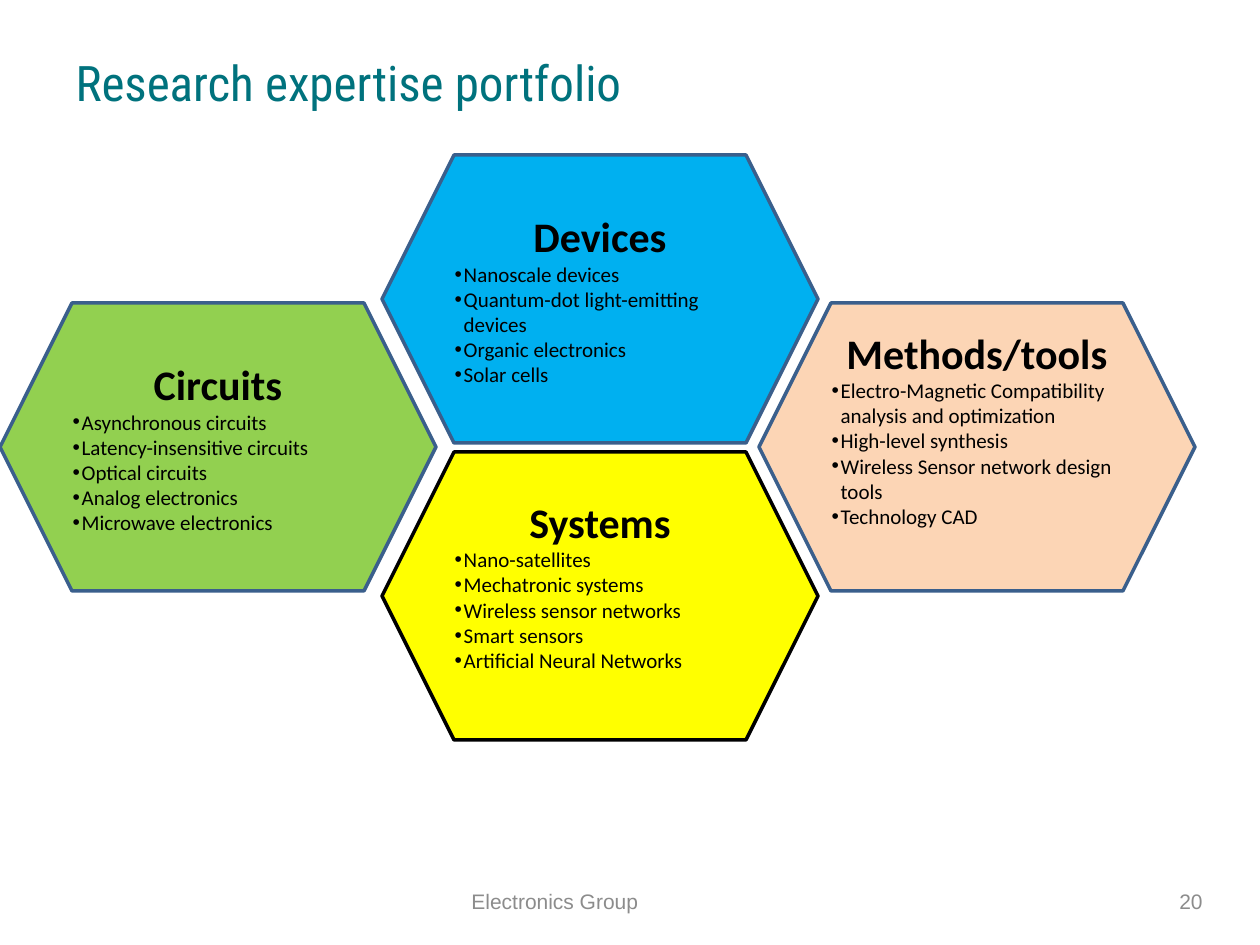
from pptx import Presentation
from pptx.dml.color import RGBColor
from pptx.enum.shapes import MSO_SHAPE
from pptx.enum.text import MSO_ANCHOR, PP_ALIGN
from pptx.util import Pt
from lxml.etree import SubElement
from pptx.oxml.ns import qn

PX = 914400 / 126
TEAL = RGBColor(0x00, 0x72, 0x7D)
GREY = RGBColor(0x8C, 0x8C, 0x8C)
BLACK = RGBColor(0x00, 0x00, 0x00)
NAVY = RGBColor(0x3A, 0x5F, 0x8C)
BLUE = RGBColor(0x00, 0xB0, 0xF0)
YELLOW = RGBColor(0xFF, 0xFF, 0x00)
PEACH = RGBColor(0xFC, 0xD5, 0xB5)
GREEN = RGBColor(0x92, 0xD0, 0x50)

WIDE, HIGH = 436, 288
TOP, STEP = 155, 297
MID = TOP + STEP // 2
LEFT, CENTRE, RIGHT = 0, 382, 759

CELLS = [
    (CENTRE, TOP, BLUE, NAVY, 0, "Devices",
     ["Nanoscale devices", "Quantum-dot light-emitting\vdevices",
      "Organic electronics", "Solar cells"]),
    (CENTRE, TOP + STEP, YELLOW, BLACK, 23, "Systems",
     ["Nano-satellites", "Mechatronic systems", "Wireless sensor networks",
      "Smart sensors", "Artificial Neural Networks"]),
    (RIGHT, MID, PEACH, NAVY, 38, "Methods/tools",
     ["Electro-Magnetic Compatibility\vanalysis and optimization",
      "High-level synthesis", "Wireless Sensor network design\vtools",
      "Technology CAD"]),
    (LEFT, MID, GREEN, NAVY, 0, "Circuits",
     ["Asynchronous circuits", "Latency-insensitive circuits",
      "Optical circuits", "Analog electronics", "Microwave electronics"]),
]


def emu(*sizes):
    return [round(size * PX) for size in sizes]


def write(para, text, size=12, font="Calibri", color=BLACK, bold=False,
          align=PP_ALIGN.LEFT, bullet=False):
    para.text = text
    para.alignment = align
    if bullet:
        props = para._p.get_or_add_pPr()
        hang = emu(9)[0]
        props.set("marL", str(hang))
        props.set("indent", str(-hang))
        SubElement(props, qn("a:buFont")).set("typeface", "Arial")
        SubElement(props, qn("a:buChar")).set("char", "•")
    for run in para.runs:
        run.font.size = Pt(size)
        run.font.name = font
        run.font.bold = bold
        run.font.color.rgb = color


def head(slide, box):
    title = slide.shapes.title
    title.left, title.top, title.width, title.height = emu(*box)
    frame = title.text_frame
    frame.vertical_anchor = MSO_ANCHOR.MIDDLE
    write(frame.paragraphs[0], "Research expertise portfolio", size=28,
          font="Roboto Condensed", color=TEAL)


def label(slide, box, text, align):
    frame = slide.shapes.add_textbox(*emu(*box)).text_frame
    frame.word_wrap = True
    frame.vertical_anchor = MSO_ANCHOR.MIDDLE
    write(frame.paragraphs[0], text, font="Arial", color=GREY, align=align)


def foot(slide, box):
    left, top, width, height = box
    label(slide, (left, top, 399, height), "Electronics Group", PP_ALIGN.LEFT)
    label(slide, (left + width - 294, top, 294, height), "20", PP_ALIGN.RIGHT)


def cell(slide, box, fill, line, lift, name, items):
    shape = slide.shapes.add_shape(MSO_SHAPE.HEXAGON, *emu(*box))
    shape.shadow.inherit = False
    shape.fill.solid()
    shape.fill.fore_color.rgb = fill
    shape.line.color.rgb = line
    shape.line.width = Pt(2)
    frame = shape.text_frame
    frame.word_wrap = True
    frame.vertical_anchor = MSO_ANCHOR.MIDDLE
    frame.margin_top = 0
    frame.margin_bottom = emu(lift)[0]
    write(frame.paragraphs[0], name, size=24, bold=True,
          align=PP_ALIGN.CENTER)
    for item in items:
        write(frame.add_paragraph(), item, bullet=True)


def main():
    deck = Presentation()
    deck.slide_width, deck.slide_height = emu(1260, 945)
    slide = deck.slides.add_slide(deck.slide_layouts[5])
    head(slide, (63, 38, 1134, 87))
    foot(slide, (459, 876, 756, 50))
    for left, top, *rest in CELLS:
        cell(slide, (left, top, WIDE, HIGH), *rest)
    deck.save("out.pptx")


if __name__ == "__main__":
    main()
